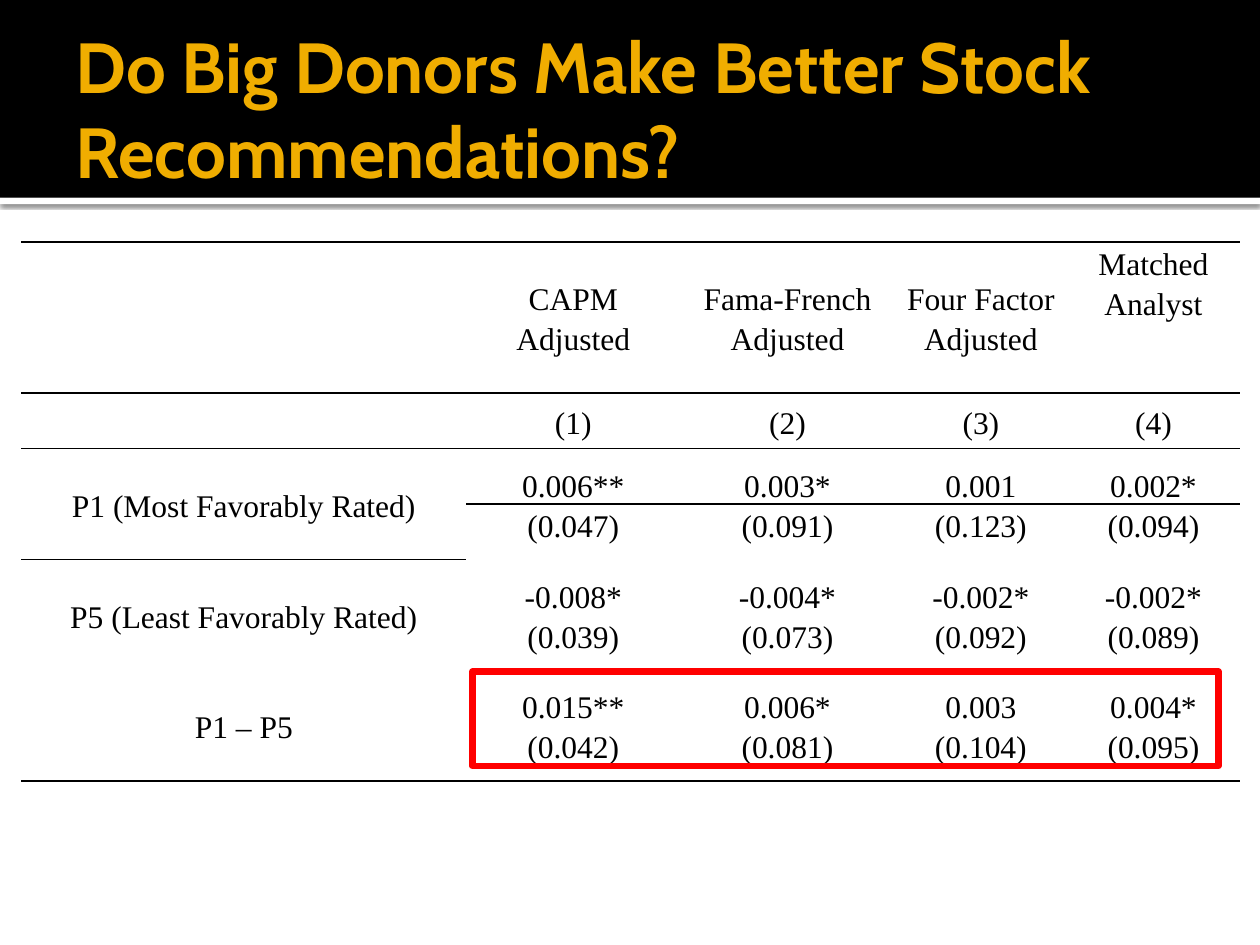
from lxml import etree
from pptx import Presentation
from pptx.dml.color import RGBColor
from pptx.enum.shapes import MSO_SHAPE
from pptx.enum.text import MSO_ANCHOR, PP_ALIGN
from pptx.oxml import parse_xml
from pptx.oxml.ns import nsdecls, qn
from pptx.util import Inches, Pt

RECT = MSO_SHAPE.RECTANGLE
TOP, MIDDLE, BOTTOM = MSO_ANCHOR.TOP, MSO_ANCHOR.MIDDLE, MSO_ANCHOR.BOTTOM
CENTER = PP_ALIGN.CENTER

BLACK = RGBColor(0, 0, 0)
WHITE = RGBColor(255, 255, 255)
GOLD = RGBColor(0xF0, 0xAD, 0x00)
RED = RGBColor(255, 0, 0)
NO_STYLE = "{2D5ABB26-0587-4C30-8999-92F81FD0307C}"

TITLE = "Do Big Donors Make Better Stock Recommendations?"
HEADERS = ["CAPM Adjusted", "Fama-French Adjusted", "Four Factor Adjusted",
           "Matched Analyst"]
PORTFOLIOS = [
    ("P1 (Most Favorably Rated)",
     ["0.006**", "0.003*", "0.001", "0.002*"],
     ["(0.047)", "(0.091)", "(0.123)", "(0.094)"]),
    ("P5 (Least Favorably Rated)",
     ["-0.008*", "-0.004*", "-0.002*", "-0.002*"],
     ["(0.039)", "(0.073)", "(0.092)", "(0.089)"]),
    ("P1 – P5",
     ["0.015**", "0.006*", "0.003", "0.004*"],
     ["(0.042)", "(0.081)", "(0.104)", "(0.095)"]),
]
COL_WIDTHS = [3.53, 1.7, 1.7, 1.37, 1.37]
HEADER_HEIGHT, ROW_HEIGHT = 1.2, 0.44


def add_rect(s, left, top, width, height, fill=None):
    sp = s.shapes.add_shape(RECT, Inches(left), Inches(top),
                            Inches(width), Inches(height))
    sp.shadow.inherit = False
    if fill is None:
        sp.fill.background()
    else:
        sp.fill.solid()
        sp.fill.fore_color.rgb = fill
        sp.line.fill.background()
    return sp


def add_shadow(sp):
    effects = sp._element.spPr.find(qn("a:effectLst"))
    shadow = etree.SubElement(effects, qn("a:outerShdw"), blurRad="31750",
                              dist="10160", dir="5400000", rotWithShape="0")
    color = etree.SubElement(shadow, qn("a:srgbClr"), val=str(BLACK))
    etree.SubElement(color, qn("a:alpha"), val="60000")


def add_border(cell, side):
    cell._tc.get_or_add_tcPr().append(parse_xml(
        f'<a:{side} {nsdecls("a")} w="{Pt(1)}"><a:solidFill>'
        f'<a:srgbClr val="{BLACK}"/></a:solidFill></a:{side}>'))


def format_text(p, font, size, color, bold=False):
    for r in p.runs:
        r.font.name = font
        r.font.size = Pt(size)
        r.font.bold = bold
        r.font.color.rgb = color


def fill_cell(cell, text, anchor):
    cell.margin_left = cell.margin_right = Inches(0.07)
    cell.margin_top = cell.margin_bottom = 0
    cell.vertical_anchor = anchor
    cell.text = text
    p = cell.text_frame.paragraphs[0]
    p.alignment = CENTER
    p.line_spacing = 1.15
    format_text(p, "Times New Roman", 18, BLACK)


def add_title(s):
    box = s.shapes.add_textbox(Inches(0.5), Inches(0.17), Inches(9), Inches(1.37))
    tf = box.text_frame
    tf.word_wrap = True
    tf.vertical_anchor = MIDDLE
    tf.margin_left = Inches(0.1)
    tf.margin_right = tf.margin_top = tf.margin_bottom = Inches(0.05)
    tf.text = TITLE
    format_text(tf.paragraphs[0], "Cabin", 40.5, GOLD, bold=True)


def add_returns_table(s):
    n_rows, n_cols = 2 + 2 * len(PORTFOLIOS), len(COL_WIDTHS)
    heights = [HEADER_HEIGHT] + [ROW_HEIGHT] * (n_rows - 1)
    frame = s.shapes.add_table(n_rows, n_cols, Inches(0.17), Inches(1.92),
                               Inches(sum(COL_WIDTHS)), Inches(sum(heights)))
    table = frame.table
    table.first_row = table.horz_banding = False
    table._tbl.tblPr.find(qn("a:tableStyleId")).text = NO_STYLE
    for column, width in zip(table.columns, COL_WIDTHS):
        column.width = Inches(width)
    for row, height in zip(table.rows, heights):
        row.height = Inches(height)

    for c, header in enumerate(HEADERS, 1):
        fill_cell(table.cell(0, c), header, TOP if c == len(HEADERS) else MIDDLE)
        fill_cell(table.cell(1, c), f"({c})", MIDDLE)
    for i, (label, returns, p_values) in enumerate(PORTFOLIOS):
        r = 2 + 2 * i
        table.cell(r, 0).merge(table.cell(r + 1, 0))
        fill_cell(table.cell(r, 0), label, MIDDLE)
        for c, (ret, p_value) in enumerate(zip(returns, p_values), 1):
            fill_cell(table.cell(r, c), ret, BOTTOM)
            fill_cell(table.cell(r + 1, c), p_value, TOP)

    for r in range(n_rows):
        for c in range(n_cols):
            cell = table.cell(r, c)
            if r <= 2:
                add_border(cell, "lnT")
            if r <= 1 or r == n_rows - 1 or (c == 0 and r == n_rows - 2):
                add_border(cell, "lnB")
            cell.fill.background()


def main():
    prs = Presentation()
    prs.slide_width, prs.slide_height = Inches(10), Inches(7.5)
    s = prs.slides.add_slide(prs.slide_layouts[6])
    add_shadow(add_rect(s, 0, 1.57, 10, 0.05, WHITE))
    add_rect(s, 0, 0, 10, 1.57, BLACK)
    add_title(s)
    add_returns_table(s)
    highlight = add_rect(s, 3.75, 5.33, 5.92, 0.75)
    highlight.line.color.rgb = RED
    highlight.line.width = Pt(3.78)
    prs.save("out.pptx")


if __name__ == "__main__":
    main()
